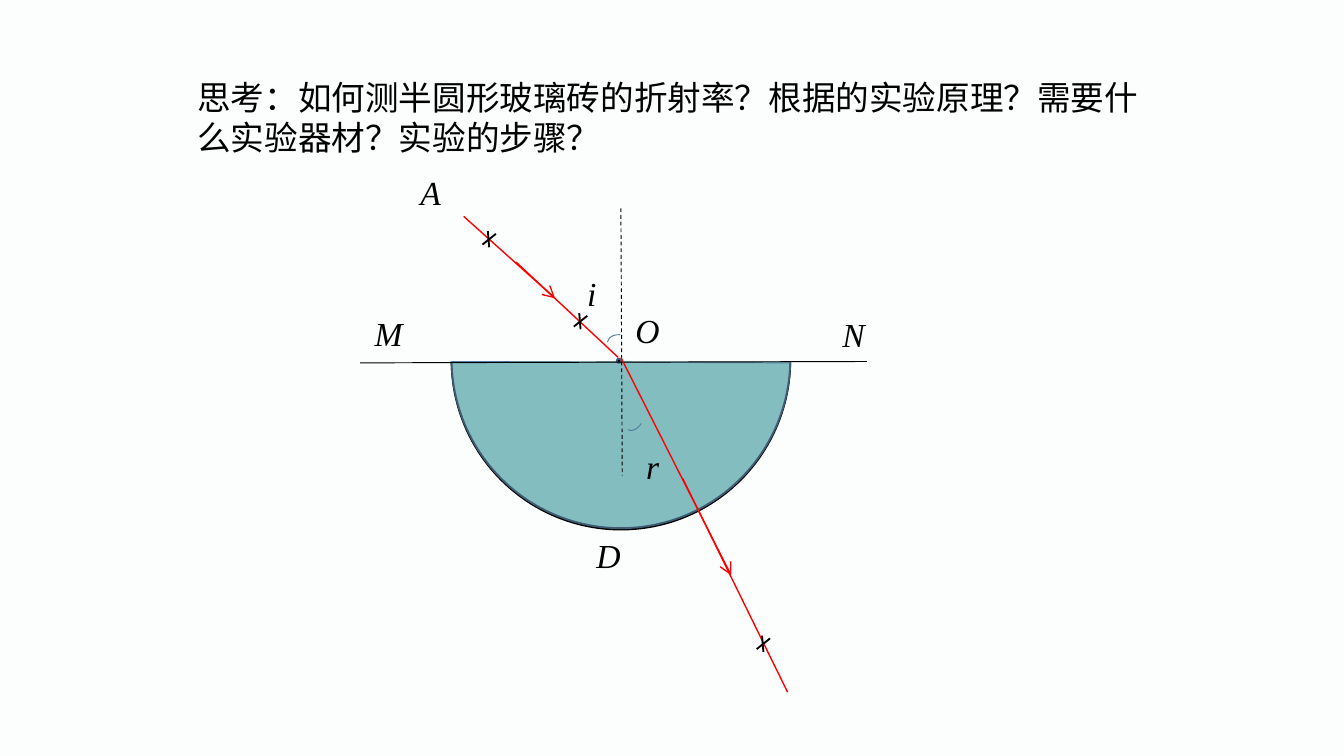
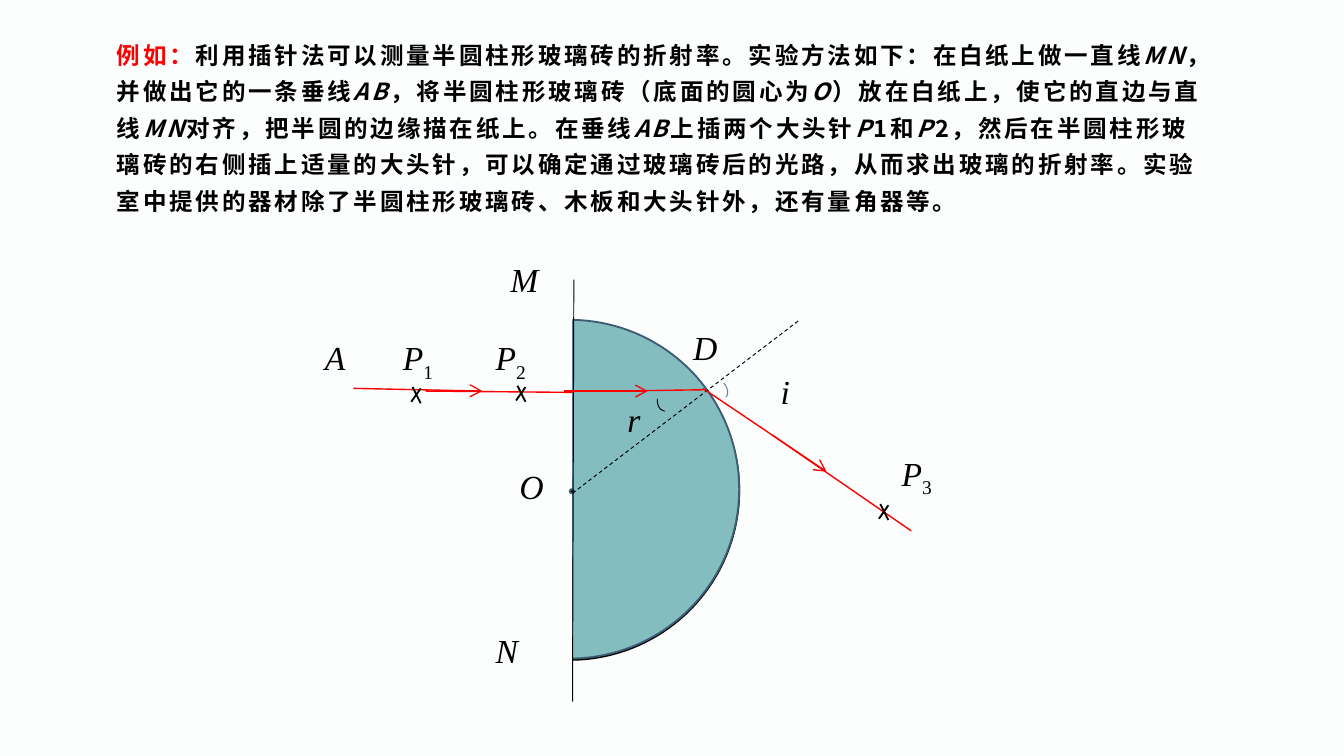
from dataclasses import dataclass

from lxml import etree
from pptx import Presentation
from pptx.dml.color import RGBColor
from pptx.enum.dml import MSO_LINE
from pptx.enum.shapes import MSO_CONNECTOR, MSO_SHAPE
from pptx.enum.text import MSO_ANCHOR, MSO_AUTO_SIZE
from pptx.oxml.ns import qn
from pptx.util import Inches, Pt

BLACK = RGBColor(0x00, 0x00, 0x00)
RED = RGBColor(0xFF, 0x00, 0x00)
PAPER = RGBColor(0xFC, 0xFD, 0xFD)
GLASS = RGBColor(0x83, 0xBD, 0xBF)
GLASS_EDGE = RGBColor(0x3E, 0x5C, 0x74)
THIN_BLUE = RGBColor(0x54, 0x7D, 0x9D)

SANS, CHINESE, SERIF = "Arial", "Noto Sans CJK SC", "Times New Roman"
ELLIPSE, RECTANGLE, ARC = MSO_SHAPE.OVAL, MSO_SHAPE.RECTANGLE, MSO_SHAPE.ARC
STRAIGHT, DASH = MSO_CONNECTOR.STRAIGHT, MSO_LINE.DASH
TOP, GROW, FIXED = MSO_ANCHOR.TOP, MSO_AUTO_SIZE.SHAPE_TO_FIT_TEXT, MSO_AUTO_SIZE.NONE
CONTENT_LAYOUT, BLANK_LAYOUT = 1, 6
DIAMETER, DOT, LABEL_HEIGHT = 2.52, 0.03, 0.4

Point = tuple[float, float]
Stroke = tuple[Point, Point]

QUESTION = "思考：如何测半圆形玻璃砖的折射率？根据的实验原理？需要什么实验器材？实验的步骤？"
EXAMPLE_HEAD = "例如："
EXAMPLE = [
    "利用插针法可以测量半圆柱形玻璃砖的折射率。实验方法如下：在白纸上做一直线", "MN",
    "，并做出它的一条垂线", "AB",
    "，将半圆柱形玻璃砖（底面的圆心为", "O",
    "）放在白纸上，使它的直边与直线", "MN",
    "对齐，把半圆的边缘描在纸上。在垂线", "AB",
    "上插两个大头针", "P", "1和", "P",
    "2，然后在半圆柱形玻璃砖的右侧插上适量的大头针，可以确定通过玻璃砖后的光路，"
    "从而求出玻璃的折射率。实验室中提供的器材除了半圆柱形玻璃砖、木板和大头针外，还有量角器等。",
]
FLAT_PIN = [((0.05, -0.04), (-0.05, 0.04)), ((0, 0.06), (-0.01, -0.06))]
STEEP_PIN = [((0.03, -0.05), (-0.04, 0.05)), ((0.03, 0.06), (-0.03, -0.06))]


@dataclass
class Label:
    """A point or angle name, with an optional subscript."""
    text: str
    left: float
    top: float
    subscript: str = ""
    width: float = 0.56
    turn: float = 0


@dataclass
class Ray:
    """A light ray: an arrow, the stretch after it, and pin centres."""
    arrow: Stroke
    rest: Stroke
    pins: tuple[Point, ...] = ()


@dataclass
class HalfDisc:
    """A glass half disc made of a circle and a paper-coloured cover."""
    left: float
    top: float
    cover: Point
    chord: Stroke
    centre: Point
    turn: float = 0


@dataclass
class AngleMark:
    """A small arc that marks an angle."""
    left: float
    top: float
    turn: float
    flipped: bool = False
    color: RGBColor = THIN_BLUE


def add_span(para, text: str, *, size: float, font: str, color: RGBColor = BLACK,
             bold: bool = False, italic: bool = False, spacing: float = 0,
             baseline: int = 0) -> None:
    """Append formatted text to a paragraph."""
    span = para.add_run()
    span.text = text
    span.font.size, span.font.name = Pt(size), font
    span.font.bold, span.font.italic = bold, italic
    span.font.color.rgb = color
    properties = span.font._element
    latin = properties.find(qn("a:latin"))
    latin.addnext(etree.Element(qn("a:ea"), typeface=CHINESE))
    if spacing:
        properties.set("spc", str(int(spacing * 100)))
    if baseline:
        properties.set("baseline", str(baseline * 1000))


def add_text_box(page, left: float, top: float, width: float, height: float):
    """Add a wrapping text box that grows and return it."""
    box = page.shapes.add_textbox(Inches(left), Inches(top), Inches(width), Inches(height))
    box.text_frame.word_wrap = True
    box.text_frame.auto_size = GROW
    return box


def add_label(page, label: Label) -> None:
    """Write one italic label."""
    box = add_text_box(page, label.left, label.top, label.width, LABEL_HEIGHT)
    box.rotation = label.turn
    para = box.text_frame.paragraphs[0]
    add_span(para, label.text, size=18, font=SERIF, italic=True)
    if label.subscript:
        add_span(para, label.subscript, size=18, font=SERIF, baseline=-25)


def add_line(shapes, stroke: Stroke, color: RGBColor = BLACK, weight: float = 0.5,
             dashed: bool = False, arrow: bool = False) -> None:
    """Draw a straight line."""
    (x1, y1), (x2, y2) = stroke
    line = shapes.add_connector(STRAIGHT, Inches(x1), Inches(y1), Inches(x2), Inches(y2))
    line.line.color.rgb = color
    line.line.width = Pt(weight)
    if dashed:
        line.line.dash_style = DASH
    properties = line._element.spPr
    if arrow:
        etree.SubElement(properties.find(qn("a:ln")), qn("a:tailEnd"), type="arrow")
    etree.SubElement(properties, qn("a:effectLst"))


def add_figure(shapes, kind, left: float, top: float, width: float, height: float, *,
               fill: RGBColor | None = None, line: RGBColor | None = None,
               weight: float = 1, turn: float = 0):
    """Draw a preset shape and return it."""
    figure = shapes.add_shape(kind, Inches(left), Inches(top), Inches(width), Inches(height))
    figure.shadow.inherit = False
    figure.rotation = turn
    if fill is None:
        figure.fill.background()
    else:
        figure.fill.solid()
        figure.fill.fore_color.rgb = fill
    if line is None:
        figure.line.fill.background()
    else:
        figure.line.color.rgb = line
        figure.line.width = Pt(weight)
    return figure


def add_half_disc(page, disc: HalfDisc) -> None:
    """Draw the glass block with its straight side and centre."""
    shapes = page.shapes.add_group_shape().shapes
    add_figure(shapes, ELLIPSE, disc.left, disc.top + 0.01, DIAMETER, DIAMETER,
               line=BLACK, turn=disc.turn)
    add_figure(shapes, ELLIPSE, disc.left, disc.top, DIAMETER, DIAMETER,
               fill=GLASS, line=GLASS_EDGE, turn=disc.turn)
    add_figure(shapes, RECTANGLE, *disc.cover, 3.19, 1.35, fill=PAPER, turn=disc.turn)
    add_line(shapes, disc.chord, THIN_BLUE)
    add_figure(shapes, ELLIPSE, *disc.centre, DOT, DOT, fill=BLACK, line=GLASS_EDGE,
               turn=disc.turn)


def add_ray(page, ray: Ray, pin: list[Stroke]) -> None:
    """Draw a ray and the pins that stand on it."""
    shapes = page.shapes.add_group_shape().shapes
    add_line(shapes, ray.arrow, RED, 0.75, arrow=True)
    add_line(shapes, ray.rest, RED, 0.75)
    for x, y in ray.pins:
        for (x1, y1), (x2, y2) in pin:
            add_line(shapes, ((x + x1, y + y1), (x + x2, y + y2)), weight=1)


def add_angle_mark(page, mark: AngleMark) -> None:
    """Draw an angle arc."""
    arc = add_figure(page.shapes, ARC, mark.left, mark.top, 0.12, 0.18,
                     line=mark.color, weight=0.5, turn=mark.turn)
    if mark.flipped:
        arc._element.spPr.find(qn("a:xfrm")).set("flipV", "1")


def add_diagram(page, disc: HalfDisc, border: Stroke, normal: Stroke, rays: list[Ray],
                pin: list[Stroke], labels: list[Label], marks: list[AngleMark]) -> None:
    """Draw a whole refraction diagram."""
    add_half_disc(page, disc)
    add_line(page.shapes, border)
    add_line(page.shapes, normal, dashed=True)
    for ray in rays:
        add_ray(page, ray, pin)
    for label in labels:
        add_label(page, label)
    for mark in marks:
        add_angle_mark(page, mark)


def build_question(deck) -> None:
    """Build the slide that asks how to measure the index."""
    page = deck.slides.add_slide(deck.slide_layouts[BLANK_LAYOUT])
    para = add_text_box(page, 1.37, 0.52, 7.28, 0.71).text_frame.paragraphs[0]
    para.line_spacing = Pt(21.6)
    add_span(para, QUESTION, size=18, font=SANS)
    add_diagram(
        page,
        HalfDisc(3.36, 1.41, (2.94, 1.34), ((3.36, 2.69), (5.87, 2.7)), (4.59, 2.67)),
        border=((2.68, 2.7), (6.45, 2.69)),
        normal=((4.62, 1.55), (4.63, 3.54)),
        rays=[
            Ray(((3.45, 1.61), (4.13, 2.22)), ((3.84, 1.95), (4.6, 2.66)),
                ((3.64, 1.78), (4.32, 2.39))),
            Ray(((4.62, 2.66), (5.44, 4.28)), ((5.08, 3.56), (5.86, 5.15)),
                ((5.68, 4.79),)),
        ],
        pin=FLAT_PIN,
        labels=[
            Label("A", 3.03, 1.23), Label("N", 6.17, 2.29), Label("D", 4.34, 3.93),
            Label("M", 2.69, 2.28), Label("O", 4.63, 2.26),
            Label("i", 4.27, 1.98, width=0.25), Label("r", 4.71, 3.27, width=0.25),
        ],
        marks=[AngleMark(4.55, 2.46, 273), AngleMark(4.66, 3.03, 31, flipped=True)],
    )


def add_example_text(page) -> None:
    """Fill the body placeholder with the worked example."""
    title, body = page.shapes.title, page.placeholders[1]
    title._element.getparent().remove(title._element)
    body.left, body.top = Inches(0.77), Inches(0.19)
    body.width, body.height = Inches(8.36), Inches(1.69)
    frame = body.text_frame
    frame.word_wrap, frame.auto_size, frame.vertical_anchor = True, FIXED, TOP
    para = frame.paragraphs[0]
    para.line_spacing, para.space_before, para.space_after = Pt(19.6), Pt(0), Pt(10)
    properties = para._p.get_or_add_pPr()
    properties.set("marL", "0")
    properties.set("indent", "0")
    etree.SubElement(properties, qn("a:buNone"))
    style = {"size": 12.6, "bold": True, "spacing": 1.5}
    add_span(para, EXAMPLE_HEAD, font=SANS, color=RED, **style)
    for index, text in enumerate(EXAMPLE):
        add_span(para, text, font=CHINESE, italic=index % 2 == 1, **style)


def build_example(deck) -> None:
    """Build the slide with the pin method example."""
    page = deck.slides.add_slide(deck.slide_layouts[CONTENT_LAYOUT])
    add_example_text(page)
    add_diagram(
        page,
        HalfDisc(2.98, 2.38, (1.99, 3.05), ((4.26, 4.9), (4.26, 2.39)), (4.24, 3.64), 270),
        border=((4.26, 5.22), (4.27, 2.08)),
        normal=((4.26, 3.67), (5.95, 2.38)),
        rays=[
            Ray(((2.63, 2.89), (3.59, 2.91)), ((3.17, 2.91), (4.26, 2.92)),
                ((3.1, 2.94), (3.88, 2.93))),
            Ray(((4.2, 2.91), (4.82, 2.91)), ((4.55, 2.91), (5.25, 2.9))),
            Ray(((5.23, 2.89), (6.15, 3.51)), ((5.75, 3.24), (6.78, 3.95)),
                ((6.58, 3.81),)),
        ],
        pin=STEEP_PIN,
        labels=[
            Label("N", 3.59, 4.64), Label("D", 5.06, 2.38), Label("M", 3.7, 1.88),
            Label("O", 3.59, 3.45, turn=180), Label("i", 5.71, 2.71, width=0.25),
            Label("P", 2.9, 2.46, "1"), Label("P", 3.59, 2.46, "2"),
            Label("P", 6.61, 3.32, "3"), Label("A", 2.32, 2.46),
            Label("r", 4.57, 2.92, width=0.25),
        ],
        marks=[AngleMark(5.28, 2.8, 318, flipped=True),
               AngleMark(4.89, 2.88, 183, color=BLACK)],
    )


def main() -> None:
    """Build and save the deck."""
    deck = Presentation()
    deck.slide_width = Inches(10)
    deck.slide_height = deck.slide_width * 9 // 16
    backdrop = deck.slide_master.background.fill
    backdrop.solid()
    backdrop.fore_color.rgb = PAPER
    build_question(deck)
    build_example(deck)
    deck.save("out.pptx")


if __name__ == "__main__":
    main()
